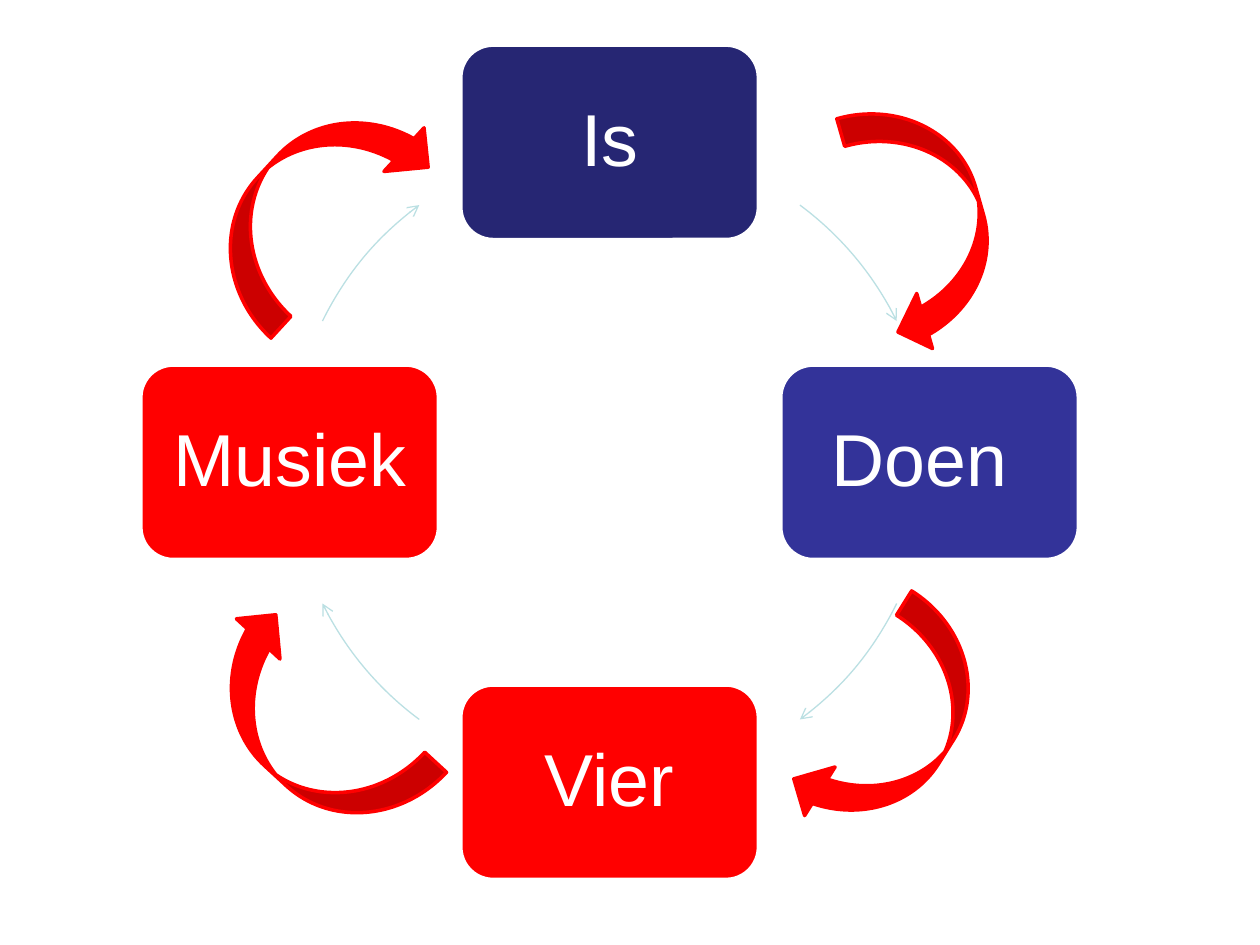
import pptx
import pptx.dml.color
import pptx.enum.shapes
import pptx.enum.text
import pptx.util
import lxml.etree

Cm = pptx.util.Cm
Pt = pptx.util.Pt
RGBColor = pptx.dml.color.RGBColor
SHAPE = pptx.enum.shapes.MSO_SHAPE

WHITE = RGBColor(0xFF, 0xFF, 0xFF)
RED = RGBColor(0xFF, 0x00, 0x00)
NAVY = RGBColor(0x26, 0x26, 0x73)
BLUE = RGBColor(0x33, 0x33, 0x99)
PALE_TEAL = RGBColor(0xBB, 0xE0, 0xE3)

CENTER_X, CENTER_Y, RADIUS = 12.29, 9.32, 6.45
BOX_WIDTH, BOX_HEIGHT = 6, 3.92


def write_text(shape, text, font="Arial", size=42, color=WHITE, inset=0.24):
    frame = shape.text_frame
    frame.word_wrap = True
    frame.vertical_anchor = pptx.enum.text.MSO_ANCHOR.MIDDLE
    frame.margin_left = frame.margin_right = Cm(inset)
    frame.margin_top = frame.margin_bottom = Cm(inset)
    para = frame.paragraphs[0]
    para.alignment = pptx.enum.text.PP_ALIGN.CENTER
    para.line_spacing = 0.9
    span = para.add_run()
    span.text = text
    span.font.name = font
    span.font.size = Pt(size)
    span.font.color.rgb = color


def add_styled_shape(kind, left, top, width, height, fill, line, weight):
    shape = page.shapes.add_shape(kind, Cm(left), Cm(top), Cm(width), Cm(height))
    shape.shadow.inherit = False
    if fill is None:
        shape.fill.background()
    else:
        shape.fill.solid()
        shape.fill.fore_color.rgb = fill
    shape.line.color.rgb = line
    shape.line.width = Pt(weight)
    return shape


deck = pptx.Presentation()
deck.slide_width = Cm(25.4)
deck.slide_height = Cm(19.05)
page = deck.slides.add_slide(deck.slide_layouts[6])

steps = [
    ("Is", NAVY, 0, -1),
    ("Doen ", BLUE, 1, 0),
    ("Vier", RED, 0, 1),
    ("Musiek", RED, -1, 0),
]
for index, (text, fill, across, down) in enumerate(steps):
    left = CENTER_X + across * RADIUS - BOX_WIDTH / 2
    top = CENTER_Y + down * RADIUS - BOX_HEIGHT / 2
    box = add_styled_shape(SHAPE.ROUNDED_RECTANGLE, left, top, BOX_WIDTH, BOX_HEIGHT, fill, WHITE, 2)
    write_text(box, text)

    start, end = [(306.5, 333.8), (26.2, 53.5), (126.5, 153.8), (206.2, 233.5)][index]
    arc = add_styled_shape(SHAPE.ARC, CENTER_X - RADIUS, CENTER_Y - RADIUS,
                           2 * RADIUS, 2 * RADIUS, None, PALE_TEAL, 0.75)
    arc.adjustments[0] = start * 0.6
    arc.adjustments[1] = end * 0.6
    outline = arc.line._get_or_add_ln()
    lxml.etree.SubElement(outline, pptx.oxml.ns.qn("a:tailEnd"), type="arrow")

curved_arrows = [
    (16.15, 3.35, 5.05, 2.31, 74),
    (15.49, 13.51, 5.05, 2.31, 122.1),
    (3.61, 13.46, 5.28, 2.39, 222.7),
    (3.73, 2.87, 5.28, 2.39, 312.6),
]
for left, top, width, height, angle in curved_arrows:
    arrow = add_styled_shape(SHAPE.CURVED_DOWN_ARROW, left, top, width, height, RED, RED, 2)
    arrow.rotation = angle
    lxml.etree.SubElement(arrow.line._get_or_add_ln(), pptx.oxml.ns.qn("a:round"))

deck.save("out.pptx")
